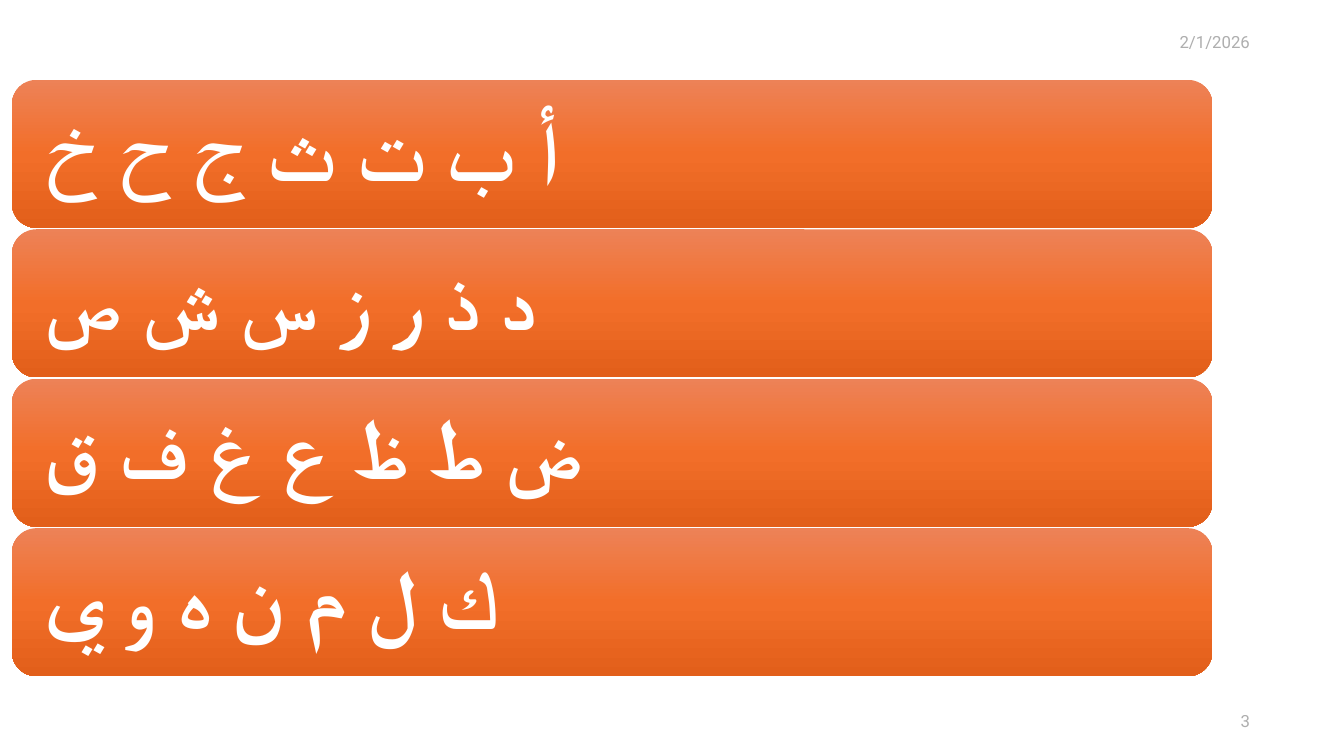
import pptx
import pptx.dml.color
import pptx.enum.shapes
import pptx.enum.text
import pptx.oxml
import pptx.oxml.ns
import pptx.util

Pt = pptx.util.Pt
RGB = pptx.dml.color.RGBColor.from_string
FONT = "Roboto"
COLORS = {
    "top": "ED8257",
    "middle": "F26E29",
    "bottom": "E25F1A",
    "letters": "FFFFFF",
    "footer": "8C8C8C",
}
LETTER_ROWS = [
    "أ ب ت ث ج ح خ",
    "د ذ ر ز س ش ص",
    "ض ط ظ ع غ ف ق",
    "ك ل م ن ه و ي",
]


def add_run(p, text, size, color, bold=False):
    r = p.add_run()
    r.text = text
    r.font.size = Pt(size)
    r.font.bold = bold
    r.font.name = FONT
    r.font.color.rgb = RGB(COLORS[color])
    cs = pptx.oxml.parse_xml(
        f'<a:cs {pptx.oxml.ns.nsdecls("a")} typeface="{FONT}"/>')
    r.font._element.append(cs)
    return r


def fill_gradient(sp):
    stops = "".join(
        f'<a:gs pos="{pos}"><a:srgbClr val="{COLORS[name]}"/></a:gs>'
        for pos, name in ((0, "top"), (50000, "middle"), (100000, "bottom")))
    sp.fill.gradient()
    grad = sp._element.spPr.find(pptx.oxml.ns.qn("a:gradFill"))
    grad.getparent().replace(grad, pptx.oxml.parse_xml(
        f'<a:gradFill {pptx.oxml.ns.nsdecls("a")} rotWithShape="1">'
        f'<a:gsLst>{stops}</a:gsLst>'
        '<a:lin ang="5400000" scaled="0"/></a:gradFill>'))


def add_letter_bar(s, text, left, top, width, height):
    sp = s.shapes.add_shape(
        pptx.enum.shapes.MSO_SHAPE.ROUNDED_RECTANGLE,
        Pt(left), Pt(top), Pt(width), Pt(height))
    sp.shadow.inherit = False
    fill_gradient(sp)
    sp.line.fill.background()
    tf = sp.text_frame
    tf.word_wrap = True
    tf.vertical_anchor = pptx.enum.text.MSO_ANCHOR.MIDDLE
    tf.margin_left = tf.margin_right = Pt(18)
    tf.margin_top = tf.margin_bottom = Pt(18)
    p = tf.paragraphs[0]
    p.alignment = pptx.enum.text.PP_ALIGN.LEFT
    p.line_spacing = 0.9
    add_run(p, text, 60, "letters", bold=True)


def add_alphabet(s, left, top, width, height):
    gap = 1
    bar = (height - gap * (len(LETTER_ROWS) - 1)) / len(LETTER_ROWS)
    for i, text in enumerate(LETTER_ROWS):
        add_letter_bar(s, text, left, top + i * (bar + gap), width, bar)


def add_footer_text(s, text, left, top, width, height):
    tf = s.shapes.add_textbox(
        Pt(left), Pt(top), Pt(width), Pt(height)).text_frame
    tf.word_wrap = True
    tf.vertical_anchor = pptx.enum.text.MSO_ANCHOR.MIDDLE
    p = tf.paragraphs[0]
    p.alignment = pptx.enum.text.PP_ALIGN.RIGHT
    p.space_after = Pt(6)
    r = add_run(p, text, 12, "footer")
    color = r.font._element.find(".//" + pptx.oxml.ns.qn("a:srgbClr"))
    color.append(pptx.oxml.parse_xml(
        f'<a:alpha {pptx.oxml.ns.nsdecls("a")} val="70000"/>'))


def main():
    prs = pptx.Presentation()
    prs.slide_width, prs.slide_height = Pt(960), Pt(540)
    s = prs.slides.add_slide(prs.slide_layouts[6])
    add_footer_text(s, "2/1/2026", 739.5, 15.5, 160.5, 28.8)
    add_footer_text(s, "3", 780, 500.5, 120, 28.8)
    add_alphabet(s, 8.5, 57, 857.5, 426)
    prs.save("out.pptx")


if __name__ == "__main__":
    main()
